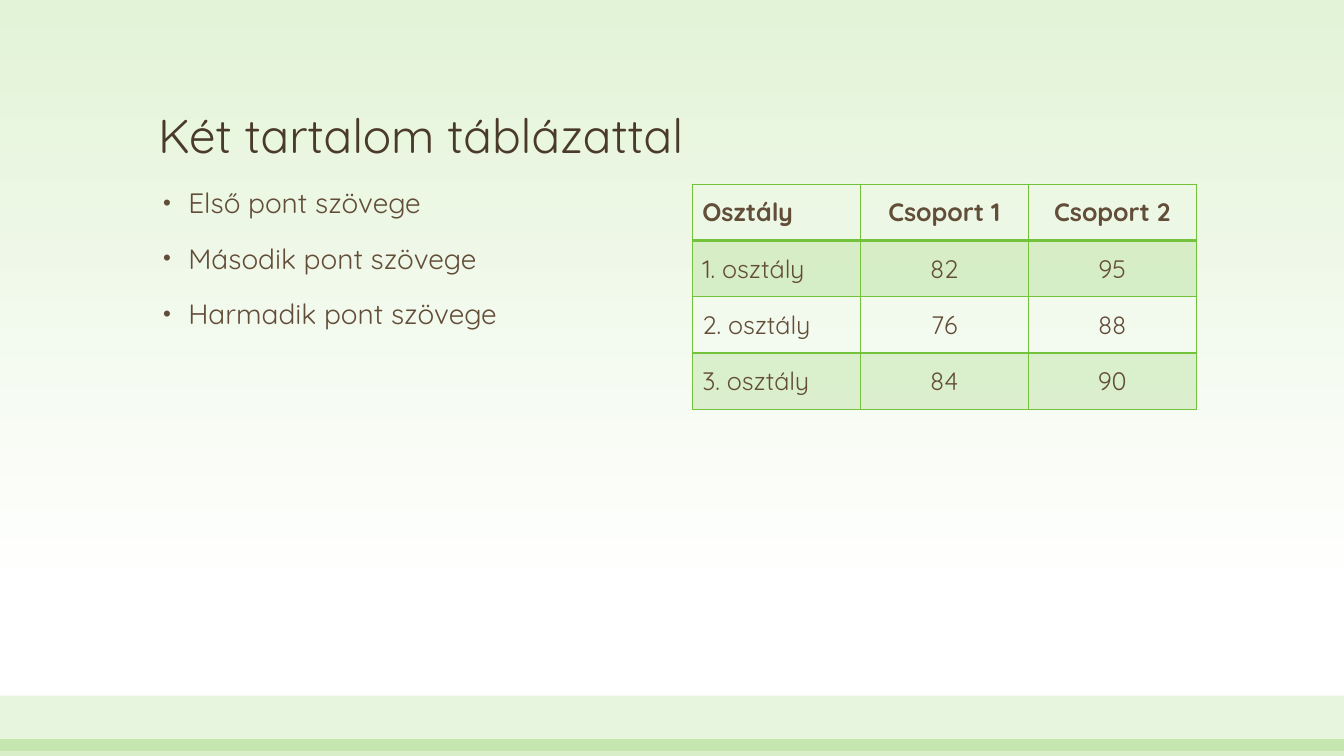
import pptx
import pptx.dml.color
import pptx.enum.shapes
import pptx.enum.text
import pptx.oxml
import pptx.oxml.ns
import pptx.util

Pt = pptx.util.Pt
qn = pptx.oxml.ns.qn
ALIGN = pptx.enum.text.PP_ALIGN
ANCHOR = pptx.enum.text.MSO_ANCHOR

GREEN = "72C23C"
BROWN = "624D38"
DARK_BROWN = "4A3A2A"
PAGE_WIDTH, PAGE_HEIGHT = 960, 540
LEFT_EDGE, CONTENT_TOP = 105.84, 131.76
TABLE_LEFT, COLUMN_WIDTH, ROW_HEIGHT = 494.5, 120, 40.15

BULLETS = ["Első pont szövege", "Második pont szövege", "Harmadik pont szövege"]
RESULTS = [
    ["Osztály", "Csoport 1", "Csoport 2"],
    ["1. osztály", "82", "95"],
    ["2. osztály", "76", "88"],
    ["3. osztály", "84", "90"],
]


def color(value):
    return pptx.dml.color.RGBColor.from_string(value)


def apply(target, values):
    for name, value in values.items():
        setattr(target, name, value)


def add_span(para, text, size, tone, bold=False):
    span = para.add_run()
    span.text = text
    apply(span.font, {"name": "Quicksand", "size": Pt(size), "bold": bold})
    span.font.color.rgb = color(tone)


def fill_tint(fill, properties, tone, percent):
    """Fill with a see-through colour; properties is the element that holds the fill."""
    fill.solid()
    fill.fore_color.rgb = color(tone)
    tint = properties.find(qn("a:solidFill")).find(qn("a:srgbClr"))
    pptx.oxml.ns  # namespace helpers are loaded with pptx.oxml
    alpha = tint.makeelement(qn("a:alpha"), {"val": str(percent * 1000)})
    tint.append(alpha)


def paint_background(page):
    fill = page.background.fill
    fill.gradient()
    fill.gradient_angle = 270
    for stop, (position, tone) in zip(fill.gradient_stops, [(0, "E3F3D8"), (0.79, "FFFFFF")]):
        stop.position = position
        stop.color.rgb = color(tone)


def add_band(page, top, height, percent):
    band = page.shapes.add_shape(
        pptx.enum.shapes.MSO_SHAPE.RECTANGLE, 0, Pt(top), Pt(PAGE_WIDTH), Pt(height))
    band.shadow.inherit = False
    band.line.fill.background()
    fill_tint(band.fill, band._element.spPr, GREEN, percent)


def add_text_frame(page, left, top, width, height, anchor):
    box = page.shapes.add_textbox(Pt(left), Pt(top), Pt(width), Pt(height))
    apply(box.text_frame, {"word_wrap": True, "vertical_anchor": anchor})
    return box.text_frame


def add_title(page, text):
    frame = add_text_frame(page, LEFT_EDGE, 34.56, 748.8, 85.68, ANCHOR.BOTTOM)
    para = frame.paragraphs[0]
    para.line_spacing = 0.9
    add_span(para, text, 34, DARK_BROWN)


def add_bullets(page, lines):
    frame = add_text_frame(page, LEFT_EDGE, CONTENT_TOP, 360, 342, ANCHOR.TOP)
    for index, line in enumerate(lines):
        para = frame.add_paragraph() if index else frame.paragraphs[0]
        apply(para, {"line_spacing": 0.9, "space_before": Pt(18 if index else 0)})
        properties = para._p.get_or_add_pPr()
        properties.set("marL", str(Pt(21.6)))
        properties.set("indent", str(Pt(-18)))
        for tag, values in [("a:buSzPct", {"val": "80000"}),
                            ("a:buFont", {"typeface": "Arial"}),
                            ("a:buChar", {"char": "•"})]:
            properties.append(properties.makeelement(qn(tag), values))
        add_span(para, line, 20, BROWN)


def add_border(properties, side, width):
    properties.append(pptx.oxml.parse_xml(
        f'<a:{side} {pptx.oxml.ns.nsdecls("a")} w="{Pt(width)}"><a:solidFill>'
        f'<a:srgbClr val="{GREEN}"/></a:solidFill></a:{side}>'))


def add_results_table(page, rows):
    columns = len(rows[0])
    frame = page.shapes.add_table(
        len(rows), columns, Pt(TABLE_LEFT), Pt(CONTENT_TOP),
        Pt(COLUMN_WIDTH * columns), Pt(ROW_HEIGHT * len(rows)))
    table = frame.table
    for row_index, row in enumerate(rows):
        for column_index, text in enumerate(row):
            cell = table.cell(row_index, column_index)
            cell.vertical_anchor = ANCHOR.MIDDLE
            para = cell.text_frame.paragraphs[0]
            para.alignment = ALIGN.CENTER if column_index else ALIGN.LEFT
            add_span(para, text, 18, BROWN, bold=row_index == 0)
            # The rule under the header is twice as thick
            properties = cell._tc.get_or_add_tcPr()
            widths = {"lnL": 1, "lnR": 1,
                      "lnT": 2 if row_index == 1 else 1,
                      "lnB": 2 if row_index == 0 else 1}
            for side, width in widths.items():
                add_border(properties, side, width)
            # Odd rows are tinted
            if row_index % 2:
                fill_tint(cell.fill, properties, GREEN, 20)
            else:
                cell.fill.background()


def main():
    deck = pptx.Presentation()
    apply(deck, {"slide_width": Pt(PAGE_WIDTH), "slide_height": Pt(PAGE_HEIGHT)})
    page = deck.slides.add_slide(deck.slide_layouts[6])

    # Background and bottom bands
    paint_background(page)
    add_band(page, 496.8, 39.6, 17)
    add_band(page, 528, 12, 28)

    # Title, table and bullet list
    add_title(page, "Két tartalom táblázattal")
    add_results_table(page, RESULTS)
    add_bullets(page, BULLETS)

    deck.save("out.pptx")


if __name__ == "__main__":
    main()
